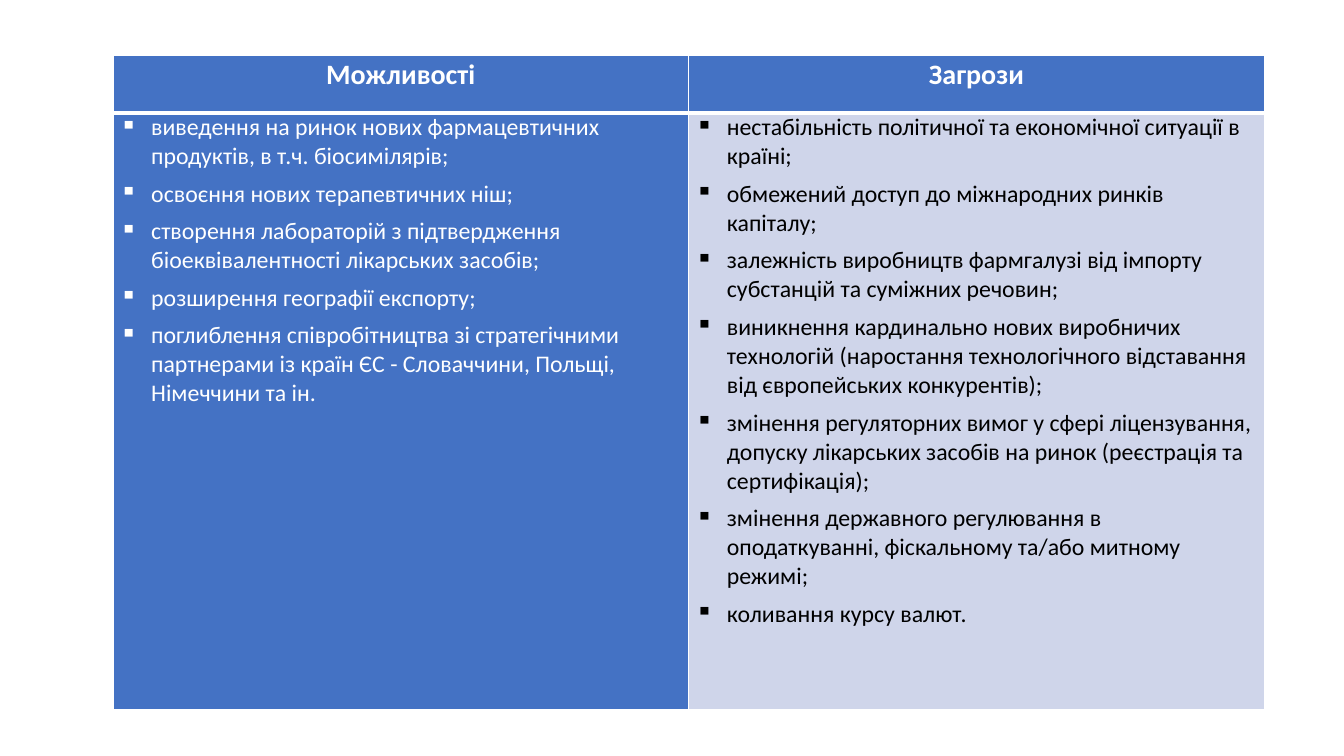
from lxml.etree import SubElement
from pptx import Presentation
from pptx.dml.color import RGBColor
from pptx.enum.text import PP_ALIGN
from pptx.oxml import parse_xml
from pptx.oxml.ns import nsdecls, qn
from pptx.util import Pt

# Scale: 100 px to the inch
PX = 9144

WHITE = RGBColor(0xFF, 0xFF, 0xFF)
BLACK = RGBColor(0x00, 0x00, 0x00)
BLUE = RGBColor(0x44, 0x72, 0xC4)
PALE = RGBColor(0xCF, 0xD5, 0xEA)

# Format values
HEAD_FONT = {"name": "Calibri", "size": Pt(20), "bold": True}
BODY_FONT = {"name": "Calibri", "size": Pt(17), "bold": False}
HEAD_PARA = {"alignment": PP_ALIGN.CENTER, "line_spacing": 1.07}
BODY_PARA = {"alignment": PP_ALIGN.LEFT, "space_after": Pt(6)}
INSETS = {
    "margin_left": 7 * PX,
    "margin_right": 7 * PX,
    "margin_top": 0,
    "margin_bottom": 0,
}
PLAIN = {"first_row": False, "horz_banding": False}
HEAD_EDGE = {"L": 1, "R": 1, "T": 1, "B": 3}
BODY_EDGE = {"L": 1, "R": 1, "T": 3, "B": 1}

# Columns: title, fill of the list, text colour of the list, items
COLUMNS = [
    ("Можливості", BLUE, WHITE, [
        "виведення на ринок нових фармацевтичних продуктів, в т.ч. біосимілярів;",
        "освоєння нових терапевтичних ніш;",
        "створення лабораторій з підтвердження біоеквівалентності лікарських засобів;",
        "розширення географії експорту;",
        "поглиблення співробітництва зі стратегічними партнерами із країн ЄС - "
        "Словаччини, Польщі, Німеччини та ін.",
    ]),
    ("Загрози", PALE, BLACK, [
        "нестабільність політичної та економічної ситуації в країні;",
        "обмежений доступ до міжнародних ринків капіталу;",
        "залежність виробництв фармгалузі від імпорту субстанцій та суміжних речовин;",
        "виникнення кардинально нових виробничих технологій (наростання "
        "технологічного відставання від європейських конкурентів);",
        "змінення регуляторних вимог у сфері ліцензування, допуску лікарських "
        "засобів на ринок (реєстрація та сертифікація);",
        "змінення державного регулювання в оподаткуванні, фіскальному та/або "
        "митному режимі;",
        "коливання курсу валют.",
    ]),
]


def style(item, values):
    for key, value in values.items():
        setattr(item, key, value)


def edge(cell, widths):
    """Draw white borders, given in points by side."""
    props = cell._tc.get_or_add_tcPr()
    for spot, (side, width) in enumerate(widths.items()):
        props.insert(spot, parse_xml(
            f'<a:ln{side} {nsdecls("a")} w="{Pt(width)}"><a:solidFill>'
            f'<a:srgbClr val="{WHITE}"/></a:solidFill></a:ln{side}>'))


def bullet(para):
    props = para._p.get_or_add_pPr()
    props.set("marL", str(31 * PX))
    props.set("indent", str(-31 * PX))
    SubElement(props, qn("a:buChar")).set("char", "▪")


def write(cell, lines, font, color, layout):
    """Fill a cell with one paragraph per line."""
    frame = cell.text_frame
    frame.text = "\n".join(lines)
    for para in frame.paragraphs:
        style(para, layout)
        run = para.runs[0]
        style(run.font, font)
        run.font.color.rgb = color


def paint(cell, fill, widths):
    style(cell, INSETS)
    cell.fill.solid()
    cell.fill.fore_color.rgb = fill
    edge(cell, widths)


def add_grid(slide):
    shape = slide.shapes.add_table(
        2, len(COLUMNS), 112 * PX, 55 * PX, 1142 * PX, 649 * PX)
    table = shape.table
    style(table, PLAIN)
    for row, height in zip(table.rows, (57, 592)):
        row.height = height * PX
    for col, (title, fill, color, items) in enumerate(COLUMNS):
        # Header
        head = table.cell(0, col)
        write(head, [title], HEAD_FONT, WHITE, HEAD_PARA)
        paint(head, BLUE, HEAD_EDGE)
        # List
        body = table.cell(1, col)
        write(body, items, BODY_FONT, color, BODY_PARA)
        paint(body, fill, BODY_EDGE)
        for para in body.text_frame.paragraphs:
            bullet(para)


def main():
    deck = Presentation()
    style(deck, {"slide_width": 1333 * PX, "slide_height": 750 * PX})
    slide = deck.slides.add_slide(deck.slide_layouts[6])
    add_grid(slide)
    deck.save("out.pptx")


if __name__ == "__main__":
    main()
